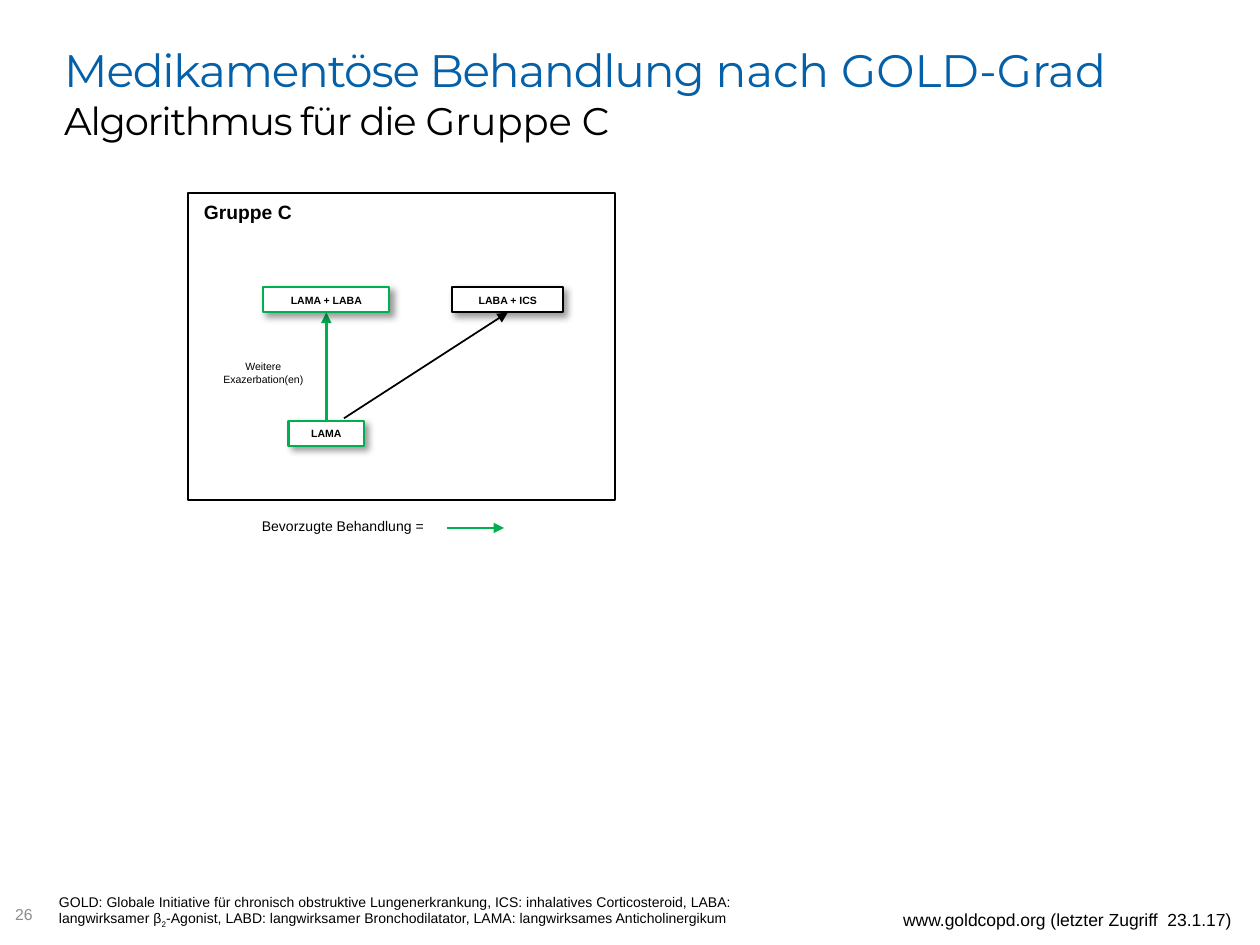
import pptx
import pptx.dml.color
import pptx.enum.shapes
import pptx.enum.text
import pptx.oxml
import pptx.oxml.ns
import pptx.util
from pptx.util import Inches

ALIGN = pptx.enum.text.PP_ALIGN
ANCHOR = pptx.enum.text.MSO_ANCHOR
NS = pptx.oxml.ns.nsdecls("a")

THEME = {
    "font": "Arial", "title_font": "Montserrat",
    "black": "000000", "white": "FFFFFF", "blue": "0460A9",
    "green": "00B050", "gray": "8C8C8C",
    "title": 26, "subtitle": 22, "heading": 11, "source": 10,
    "number": 9, "note": 8, "label": 6,
}

# Title lines: size, colour, (text, letter spacing in 1/100 pt)
TITLE = [
    ("title", "blue", [("Medikamentöse Behandlung ", -70), ("nach GOLD-Grad ", 0)]),
    ("subtitle", "black", [("Algorithmus für die ", -70), ("Gruppe C", 0)]),
]
PANEL = (1.49, 1.53, 3.39, 2.44)
# Treatments: centre x, top, width, line colour
BOX_HEIGHT = 0.2
BOXES = {
    "LAMA + LABA": (2.59, 2.28, 1, "green"),
    "LABA + ICS": (4.03, 2.28, 0.88, "black"),
    "LAMA": (2.59, 3.34, 0.6, "green"),
}
# Texts: runs, place, size, further format
ABBREVIATIONS = [
    "GOLD: Globale Initiative für chronisch obstruktive Lungenerkrankung, "
    "ICS: inhalatives Corticosteroid, LABA: langwirksamer β",
    "2",
    "-Agonist, LABD: langwirksamer Bronchodilatator, "
    "LAMA: langwirksames Anticholinergikum",
]
TEXTS = [
    (["Gruppe C"], (1.52, 1.54, 0.96, 0.29), "heading", {"bold": True}),
    (["Weitere Exazerbation(en)"], (1.62, 2.81, 0.94, 0.3), "label",
     {"align": ALIGN.CENTER}),
    (["Bevorzugte Behandlung ="], (1.98, 4.06, 2.36, 0.37), "note", {}),
    (ABBREVIATIONS, (0.37, 7.04, 5.93, 0.37), "note", {}),
    (["www.goldcopd.org (letzter Zugriff  23.1.17)"], (6.94, 7.15, 2.93, 0.29),
     "source", {"align": ALIGN.RIGHT, "spacing": 1.1}),
    (["26"], (0, 7.06, 0.31, 0.4), "number",
     {"color": "gray", "anchor": ANCHOR.MIDDLE, "insets": (0.12, 0.05)}),
]


def rgb(name):
    return pptx.dml.color.RGBColor.from_string(THEME[name])


def set_font(font, size, color="black", bold=False, name="font"):
    font.name, font.size, font.bold = THEME[name], pptx.util.Pt(THEME[size]), bold
    font.color.rgb = rgb(color)


def set_line(s, color, width):
    s.line.color.rgb, s.line.width = rgb(color), pptx.util.Pt(width)


def add_text(slide, runs, place, size, align=ALIGN.LEFT, spacing=None, color="black",
             bold=False, anchor=ANCHOR.TOP, insets=(0.1, 0.1)):
    tf = slide.shapes.add_textbox(*map(Inches, place)).text_frame
    tf.word_wrap, tf.vertical_anchor = True, anchor
    tf.margin_left, tf.margin_right = map(Inches, insets)
    p = tf.paragraphs[0]
    p.alignment, p.line_spacing = align, spacing
    set_font(p.font, size, color, bold)
    for i, text in enumerate(runs):
        r = p.add_run()
        r.text = text
        if i % 2:  # every second run is a subscript
            r.font._element.set("baseline", "-25000")


def add_rect(slide, place, line):
    s = slide.shapes.add_shape(pptx.enum.shapes.MSO_SHAPE.RECTANGLE, *map(Inches, place))
    s.shadow.inherit = False
    set_line(s, line, 1.25)
    return s


def add_box(slide, text, center, top, width, line):
    s = add_rect(slide, (center - width / 2, top, width, BOX_HEIGHT), line)
    s.fill.solid()
    s.fill.fore_color.rgb = rgb("white")
    effects = s._element.spPr.find(pptx.oxml.ns.qn("a:effectLst"))
    effects.append(pptx.oxml.parse_xml(
        f'<a:outerShdw {NS} blurRad="50800" dist="38100" dir="2700000" algn="tl" '
        'rotWithShape="0"><a:srgbClr val="000000"><a:alpha val="40000"/>'
        '</a:srgbClr></a:outerShdw>'))
    tf = s.text_frame
    tf.margin_top = tf.margin_bottom = 0
    tf.vertical_anchor = ANCHOR.MIDDLE
    p = tf.paragraphs[0]
    p.text, p.alignment = text, ALIGN.CENTER
    set_font(p.font, "label", bold=True)


def add_arrow(slide, start, end, color, width):
    s = slide.shapes.add_connector(pptx.enum.shapes.MSO_CONNECTOR.STRAIGHT,
                                   *map(Inches, start + end))
    set_line(s, color, width)
    s.line._get_or_add_ln().append(
        pptx.oxml.parse_xml(f'<a:tailEnd {NS} type="triangle"/>'))
    s._element.spPr.append(pptx.oxml.parse_xml(f"<a:effectLst {NS}/>"))


def add_title(slide):
    s = slide.shapes.title
    s.left, s.top, s.width, s.height = map(Inches, (0.51, 0.21, 9.13, 1.05))
    tf = s.text_frame
    tf.margin_left = tf.margin_right = tf.margin_top = tf.margin_bottom = 0
    tf.vertical_anchor = ANCHOR.MIDDLE
    tf.auto_size = pptx.enum.text.MSO_AUTO_SIZE.NONE
    p = tf.paragraphs[0]
    p.alignment = ALIGN.LEFT
    for i, (size, color, runs) in enumerate(TITLE):
        if i:
            p.add_line_break()
            p._p[-1].append(pptx.oxml.parse_xml(
                f'<a:rPr {NS} sz="{THEME[size] * 100}"/>'))
        for text, tracking in runs:
            r = p.add_run()
            r.text = text
            set_font(r.font, size, color, name="title_font")
            r.font._element.set("spc", str(tracking))


def main():
    prs = pptx.Presentation()
    prs.slide_width, prs.slide_height = Inches(10), Inches(7.5)
    slide = prs.slides.add_slide(prs.slide_layouts[5])
    add_title(slide)
    add_rect(slide, PANEL, "black").fill.background()

    start_x, start_y = BOXES["LAMA"][:2]
    combo_x, combo_y = BOXES["LAMA + LABA"][:2]
    ics_x, ics_y = BOXES["LABA + ICS"][:2]
    add_arrow(slide, (start_x, start_y), (combo_x, combo_y + BOX_HEIGHT), "green", 2)
    add_arrow(slide, (start_x + 0.14, start_y - 0.02), (ics_x, ics_y + BOX_HEIGHT),
              "black", 1)
    for text, box in BOXES.items():
        add_box(slide, text, *box)
    for runs, place, size, form in TEXTS:
        add_text(slide, runs, place, size, **form)
    add_arrow(slide, (3.55, 4.19), (4, 4.19), "green", 1.5)
    prs.save("out.pptx")


if __name__ == "__main__":
    main()
